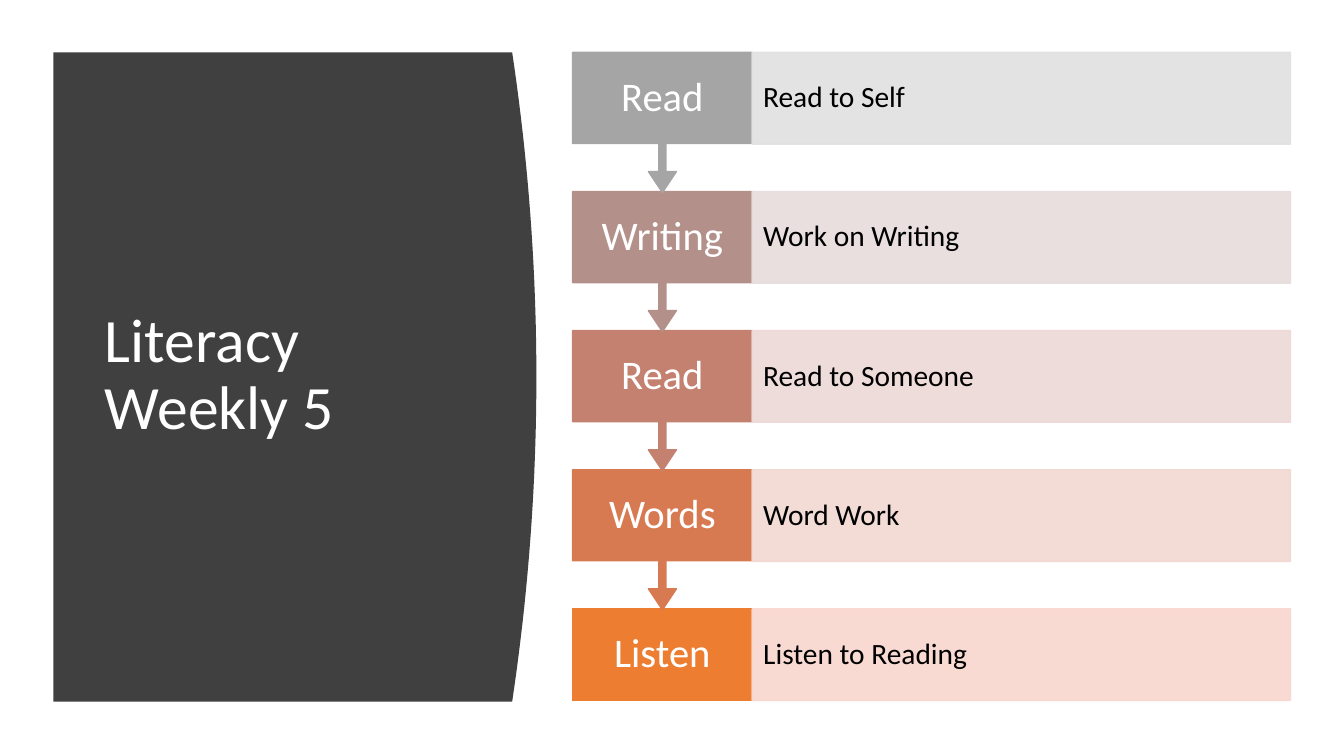
"""Build the Literacy Weekly 5 slide: a curved title panel beside a five-step flow."""
from lxml import etree
from pptx import Presentation
from pptx.dml.color import RGBColor
from pptx.enum import shapes, text
from pptx.oxml import ns
from pptx.util import Inches, Pt

COLORS = {"panel": "404040", "white": "FFFFFF", "black": "000000"}
STEPS = [
    ("Read", "Read to Self", "A5A5A5", "E1E1E1"),
    ("Writing", "Work on Writing", "B4908B", "E7DCDC"),
    ("Read", "Read to Someone", "C48170", "EDD9D7"),
    ("Words", "Word Work", "D87A51", "F2D8D2"),
    ("Listen", "Listen to Reading", "ED7D31", "F8D7CE"),
]
TOP, BOTTOM = 0.52, 6.96
PITCH, BOX_H, CALLOUT_H = 1.38, 0.91, 1.39
STEP_X, STEP_W, DETAIL_W = 5.68, 1.78, 5.34
PANEL_X, EDGE_X, BULGE, CURVE_PARTS = 0.53, 5.08, 0.24, 40


def write(sp, wording, size, color, align, inset_x, inset_y):
    tf = sp.text_frame
    frame_format = {
        "word_wrap": True,
        "auto_size": text.MSO_AUTO_SIZE.NONE,
        "vertical_anchor": text.MSO_ANCHOR.MIDDLE,
        "margin_left": Inches(inset_x),
        "margin_right": Inches(inset_x),
        "margin_top": Inches(inset_y),
        "margin_bottom": Inches(inset_y),
    }
    for name, value in frame_format.items():
        setattr(tf, name, value)
    p = tf.paragraphs[0]
    p.text = wording
    p.alignment = align
    p.line_spacing = 0.9
    for r in p.runs:
        for name, value in {"name": "Calibri", "size": Pt(size)}.items():
            setattr(r.font, name, value)
        r.font.color.rgb = RGBColor.from_string(color)


def paint(sp, color, alpha=100):
    sp.shadow.inherit = False
    sp.fill.solid()
    sp.line.fill.solid()
    sp.line.width = Pt(1)
    for target in (sp.fill.fore_color, sp.line.color):
        target.rgb = RGBColor.from_string(color)
    if alpha < 100:
        for clr in sp.element.spPr.iter(ns.qn("a:srgbClr")):
            etree.SubElement(clr, ns.qn("a:alpha")).set("val", str(alpha * 1000))


prs = Presentation()
prs.slide_width, prs.slide_height = Inches(13.33), Inches(7.5)
s = prs.slides.add_slide(prs.slide_layouts[5])

curve = []
for i in range(1, CURVE_PARTS + 1):
    t = i / CURVE_PARTS
    curve.append((Inches(EDGE_X + BULGE * 4 * t * (1 - t)),
                  Inches(TOP + (BOTTOM - TOP) * t)))
outline = s.shapes.build_freeform(Inches(PANEL_X), Inches(TOP))
outline.add_line_segments(
    [(Inches(EDGE_X), Inches(TOP)), *curve, (Inches(PANEL_X), Inches(BOTTOM))])
panel = outline.convert_to_shape()
paint(panel, COLORS["panel"])
panel.line.fill.background()

title = s.shapes.title
title.element.addprevious(panel.element)
title_box = {"left": 0.94, "top": 1.11, "width": 3.74, "height": 5.24}
for name, value in title_box.items():
    setattr(title, name, Inches(value))
write(title, "Literacy\vWeekly 5", 44, COLORS["white"], text.PP_ALIGN.LEFT, 0.1, 0.05)

for i, (step, detail, dark, light) in reversed(list(enumerate(STEPS))):
    y = Inches(TOP + i * PITCH)
    if i == len(STEPS) - 1:
        kind, height = shapes.MSO_SHAPE.RECTANGLE, BOX_H
    else:
        kind, height = shapes.MSO_SHAPE.DOWN_ARROW_CALLOUT, CALLOUT_H
    sp = s.shapes.add_shape(kind, Inches(STEP_X), y, Inches(STEP_W), Inches(height))
    if kind == shapes.MSO_SHAPE.DOWN_ARROW_CALLOUT:
        for n, value in enumerate((0.05, 0.1, 0.15, 0.65)):
            sp.adjustments[n] = value
    paint(sp, dark)
    write(sp, step, 29, COLORS["white"], text.PP_ALIGN.CENTER, 0.13, 0.23)

    sp = s.shapes.add_shape(shapes.MSO_SHAPE.RECTANGLE, Inches(STEP_X + STEP_W), y,
                            Inches(DETAIL_W), Inches(BOX_H))
    paint(sp, light, 90)
    write(sp, detail, 21, COLORS["black"], text.PP_ALIGN.LEFT, 0.11, 0.29)

prs.save("out.pptx")
